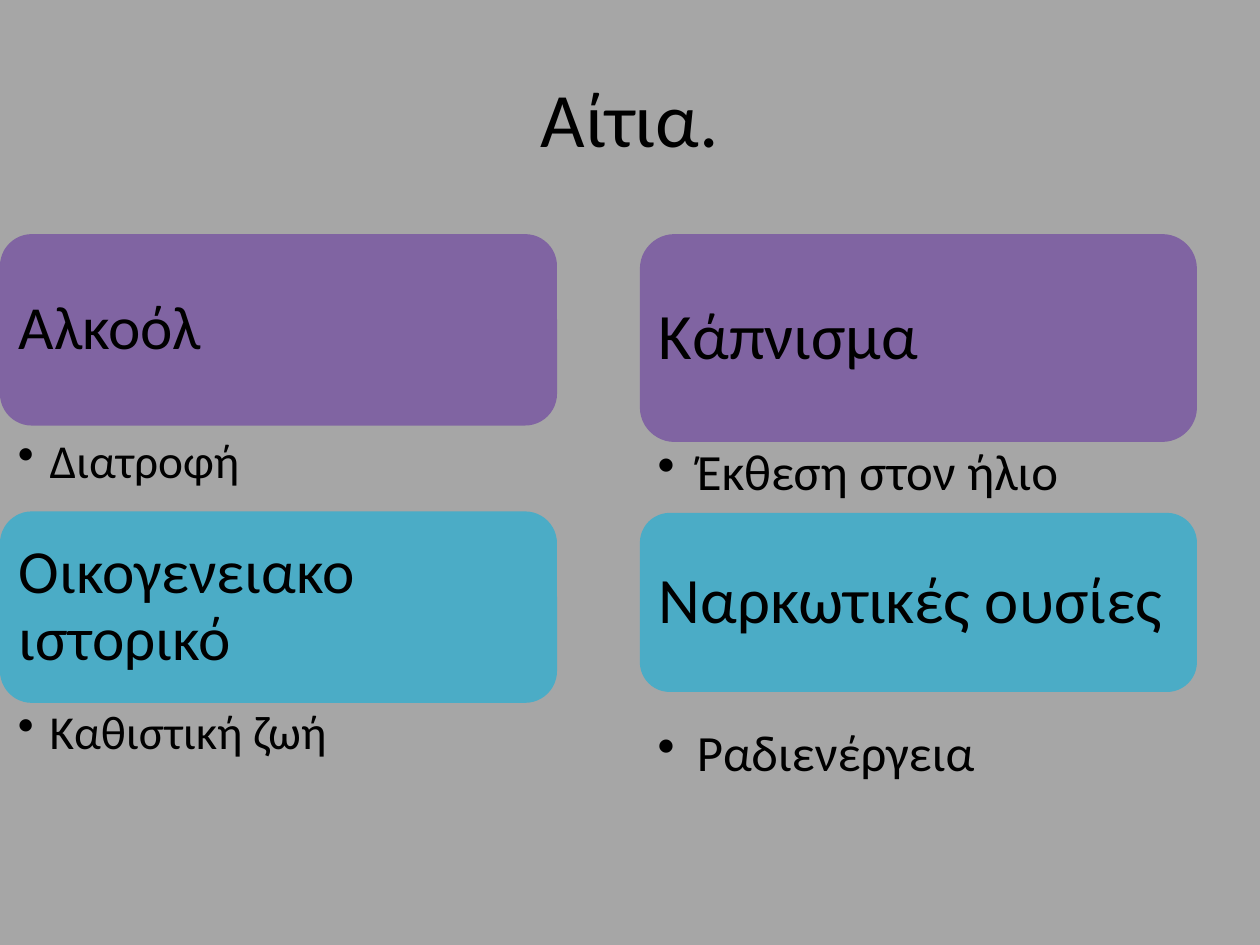
from lxml import etree
from pptx import Presentation
from pptx.dml.color import RGBColor
from pptx.enum.shapes import MSO_SHAPE
from pptx.enum.text import MSO_ANCHOR, PP_ALIGN
from pptx.oxml.ns import qn
from pptx.util import Cm, Pt

ROUNDED = MSO_SHAPE.ROUNDED_RECTANGLE
MIDDLE, TOP = MSO_ANCHOR.MIDDLE, MSO_ANCHOR.TOP
LEFT, CENTER = PP_ALIGN.LEFT, PP_ALIGN.CENTER

GREY = RGBColor(0xA6, 0xA6, 0xA6)
PURPLE = RGBColor(0x80, 0x64, 0xA2)
TEAL = RGBColor(0x4B, 0xAC, 0xC6)
BLACK = RGBColor(0, 0, 0)

COLUMN_TOP, COLUMN_WIDTH = 4.72, 11.23
CAUSE_INSET = 0.38
CORNER_INSET = 0.0488  # share of the height that rounded corners add to the inset

# Each cause: heading, fill, top and height, then detail, top and height;
# tops are measured from the top of the column, in cm.
COLUMNS = [
    {"left": 12.9, "heading_size": 37, "detail_size": 29, "indent": 0.79, "causes": [
        ("Κάπνισμα", PURPLE, 0, 4.19, "Έκθεση στον ήλιο", 4.17, 1.88),
        ("Ναρκωτικές ουσίες", TEAL, 5.62, 3.61, "Ραδιενέργεια", 9.83, 1.7)]},
    {"left": 0, "heading_size": 35, "detail_size": 27, "indent": 0.64, "causes": [
        ("Αλκοόλ", PURPLE, 0, 3.86, "Διατροφή", 3.99, 1.6),
        ("Οικογενειακο ιστορικό", TEAL, 5.59, 3.86, "Καθιστική ζωή", 9.45, 1.6)]},
]


def write(shape, text, size, line_spacing=1.0, align=LEFT, **frame_format):
    """Fill the shape with one paragraph and return that paragraph."""
    frame = shape.text_frame
    frame.word_wrap = True
    for attribute, value in frame_format.items():
        setattr(frame, attribute, value)
    paragraph = frame.paragraphs[0]
    paragraph.text = text
    paragraph.alignment = align
    paragraph.line_spacing = line_spacing
    font = paragraph.runs[0].font
    for attribute, value in {"name": "Calibri", "size": Pt(size)}.items():
        setattr(font, attribute, value)
    font.color.rgb = BLACK
    return paragraph


def add_title(slide, left, top, width, height):
    title = slide.shapes.add_textbox(Cm(left), Cm(top), Cm(width), Cm(height))
    write(title, "Αίτια.", 44, align=CENTER, vertical_anchor=MIDDLE)


def add_heading(slide, left, top, width, height, text, fill, size):
    heading = slide.shapes.add_shape(ROUNDED, Cm(left), Cm(top), Cm(width), Cm(height))
    heading.shadow.inherit = False
    heading.fill.solid()
    heading.fill.fore_color.rgb = fill
    heading.line.fill.background()
    margin = Cm(CAUSE_INSET - CORNER_INSET * height)
    write(heading, text, size, 0.9, vertical_anchor=MIDDLE,
          margin_left=margin, margin_right=margin, margin_top=margin, margin_bottom=margin)


def add_detail(slide, left, top, width, height, text, size, indent):
    detail = slide.shapes.add_textbox(Cm(left), Cm(top), Cm(width), Cm(height))
    paragraph = write(detail, text, size, 0.9, vertical_anchor=TOP,
                      margin_left=Cm(0.36), margin_right=Cm(0.7),
                      margin_top=Cm(0.12), margin_bottom=Cm(0.12))
    properties = paragraph._p.get_or_add_pPr()
    properties.set("marL", str(Cm(indent)))
    properties.set("indent", str(-Cm(indent)))
    etree.SubElement(properties, qn("a:buChar")).set("char", "•")


def add_column(slide, left, top, width, column):
    for heading, fill, heading_top, heading_height, detail, detail_top, detail_height in column["causes"]:
        add_heading(slide, left, top + heading_top, width, heading_height,
                    heading, fill, column["heading_size"])
        add_detail(slide, left, top + detail_top, width, detail_height,
                   detail, column["detail_size"], column["indent"])


def main():
    presentation = Presentation()
    presentation.slide_width, presentation.slide_height = Cm(25.4), Cm(19.05)
    slide = presentation.slides.add_slide(presentation.slide_layouts[6])
    slide.background.fill.solid()
    slide.background.fill.fore_color.rgb = GREY
    add_title(slide, 1.27, 0.76, 22.86, 3.18)
    for column in COLUMNS:
        add_column(slide, column["left"], COLUMN_TOP, COLUMN_WIDTH, column)
    presentation.save("out.pptx")


if __name__ == "__main__":
    main()
